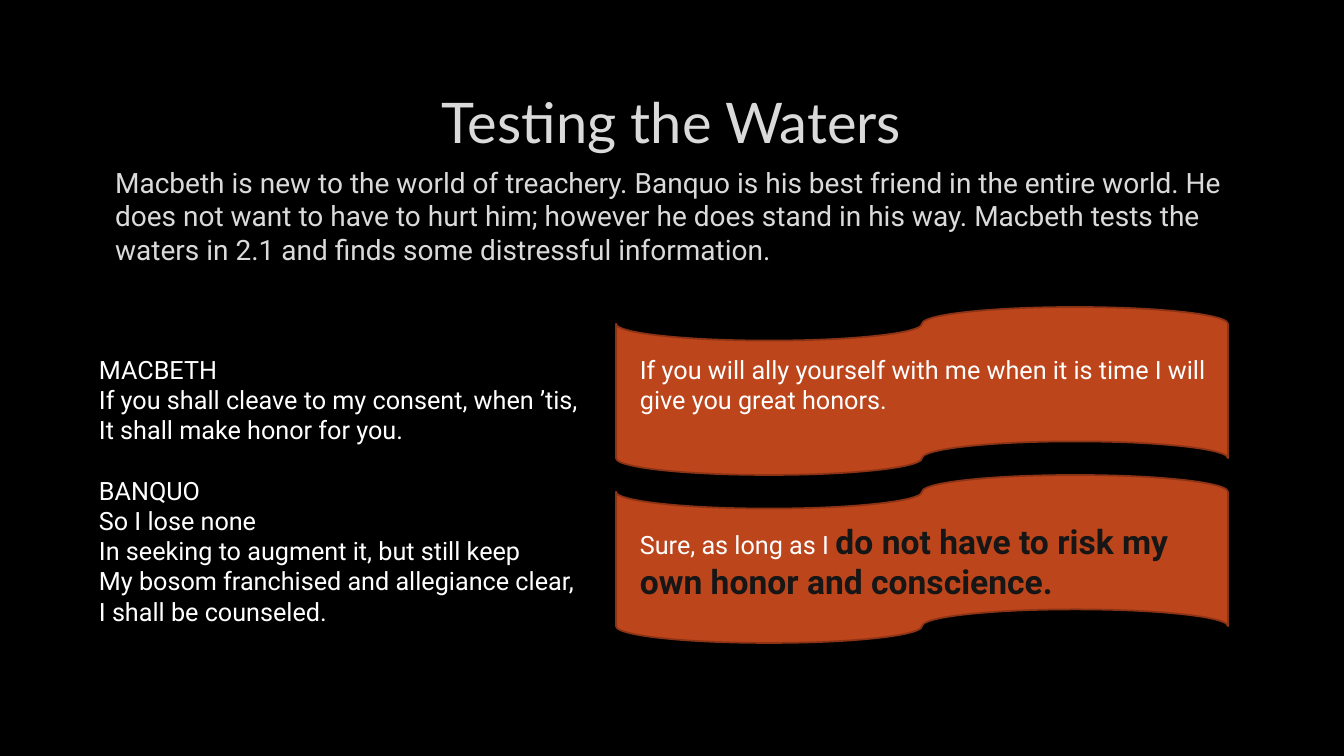
"""Build the slide "Testing the Waters" with two quotations and their paraphrases."""
from lxml import etree
from pptx import Presentation
from pptx.dml.color import RGBColor
from pptx.enum.shapes import MSO_SHAPE
from pptx.enum.text import MSO_ANCHOR, MSO_AUTO_SIZE, PP_ALIGN
from pptx.oxml.ns import qn
from pptx.util import Pt

TAPE = MSO_SHAPE.FLOWCHART_PUNCHED_TAPE
CENTER = PP_ALIGN.CENTER
MIDDLE, TOP = MSO_ANCHOR.MIDDLE, MSO_ANCHOR.TOP
NO_AUTOFIT = MSO_AUTO_SIZE.NONE
PX = 914400 / 100.8
COLORS = {
    "background": "000000",
    "heading": "DADADA",
    "text": "FFFFFF",
    "emphasis": "161616",
    "tape": "BC451B",
    "tape_line": "8B3314",
}


def box(left, top, width, height):
    return [round(length * PX) for length in (left, top, width, height)]


def add_run(paragraph, text, size, color, font="Roboto", bold=False):
    run = paragraph.add_run()
    run.text = text
    run.font.size = Pt(size)
    run.font.name = font
    run.font.bold = bold
    run.font.color.rgb = RGBColor.from_string(COLORS[color])


presentation = Presentation()
presentation.slide_width, presentation.slide_height = box(0, 0, 1344, 756)[2:]
slide = presentation.slides.add_slide(presentation.slide_layouts[1])
slide.background.fill.solid()
slide.background.fill.fore_color.rgb = RGBColor.from_string(COLORS["background"])

title, body = slide.placeholders
for placeholder, top, height, anchor in ((title, 68, 107, MIDDLE), (body, 160, 119, TOP)):
    placeholder.left, placeholder.top, placeholder.width, placeholder.height = box(
        101, top, 1141, height
    )
    placeholder.text_frame.auto_size = NO_AUTOFIT
    placeholder.text_frame.vertical_anchor = anchor

heading = title.text_frame.paragraphs[0]
heading.alignment = CENTER
add_run(heading, "Testing the Waters", 40, "heading", font="Lato")

introduction = body.text_frame.paragraphs[0]
introduction.space_after = Pt(6)
properties = introduction._p.get_or_add_pPr()
properties.set("marL", str(round(4 * PX)))
properties.set("indent", "0")
etree.SubElement(properties, qn("a:buNone"))
add_run(
    introduction,
    "Macbeth is new to the world of treachery. Banquo is his best friend in the "
    "entire world. He does not want to have to hurt him; however he does stand in "
    "his way. Macbeth tests the waters in 2.1 and finds some distressful information.",
    20,
    "heading",
)

dialogue = [
    "MACBETH",
    "If you shall cleave to my consent, when ’tis,",
    "It shall make honor for you.",
    "BANQUO",
    "So I lose none",
    "In seeking to augment it, but still keep",
    "My bosom franchised and allegiance clear,",
    "I shall be counseled.",
]
dialogue_frame = slide.shapes.add_textbox(*box(85, 349, 672, 285)).text_frame
dialogue_frame.word_wrap = True
for index, line in enumerate(dialogue):
    paragraph = dialogue_frame.add_paragraph() if index else dialogue_frame.paragraphs[0]
    paragraph._p.get_or_add_pPr().set("marL", str(round(4 * PX)))
    if line == "BANQUO":
        paragraph.space_before = Pt(21.6)
    add_run(paragraph, line, 18, "text")

paraphrases = [
    (
        307,
        349,
        72,
        [
            (
                "If you will ally yourself with me when it is time I will "
                "give you great honors.",
                18,
                "text",
                False,
            )
        ],
    ),
    (
        475,
        516,
        92,
        [
            ("Sure, as long as I ", 18, "text", False),
            ("do not have to risk my own honor and conscience.", 24, "emphasis", True),
        ],
    ),
]
for tape_top, text_top, text_height, runs in paraphrases:
    tape = slide.shapes.add_shape(TAPE, *box(616, tape_top, 612, 168))
    tape.shadow.inherit = False
    tape.fill.solid()
    tape.fill.fore_color.rgb = RGBColor.from_string(COLORS["tape"])
    tape.line.color.rgb = RGBColor.from_string(COLORS["tape_line"])
    tape.line.width = Pt(1.25)

    text_frame = slide.shapes.add_textbox(*box(630, text_top, 592, text_height)).text_frame
    text_frame.word_wrap = True
    for text, size, color, bold in runs:
        add_run(text_frame.paragraphs[0], text, size, color, bold=bold)

presentation.save("out.pptx")
